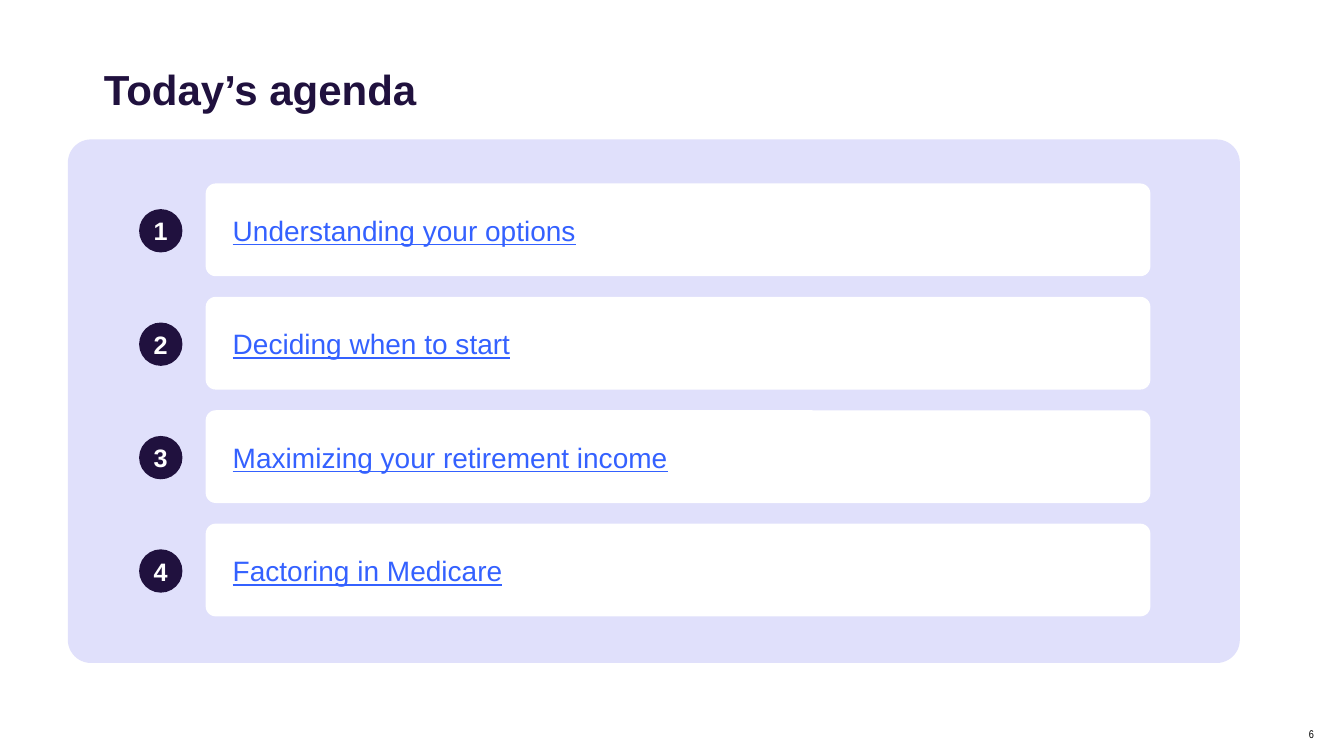
from pptx import Presentation
from pptx.dml.color import RGBColor
from pptx.enum.shapes import MSO_SHAPE as Shape
from pptx.enum.text import MSO_ANCHOR as Anchor, PP_ALIGN as Align
from pptx.util import Inches, Pt

NAVY, LAVENDER, WHITE, LINK_BLUE, BLACK = "20113E", "E0E0FB", "FFFFFF", "3461FF", "000000"
TOPICS = [
    "Understanding your options",
    "Deciding when to start",
    "Maximizing your retirement income",
    "Factoring in Medicare",
]
ROW_PITCH = 1.125
CARD_HEIGHT = 0.92
BADGE_SIZE = 0.43


def color(value):
    return RGBColor.from_string(value)


def write(shape, text, size, fill, align=Align.LEFT, inset=0.1, font="Arial",
          bold=False, underline=False):
    frame = shape.text_frame
    frame.word_wrap = True
    frame.vertical_anchor = Anchor.MIDDLE
    frame.margin_left = frame.margin_right = Inches(inset)
    frame.margin_top = frame.margin_bottom = 0
    para = frame.paragraphs[0]
    para.alignment = align
    run = para.add_run()
    run.text = text
    run.font.name = font
    run.font.size = Pt(size)
    run.font.bold = bold
    run.font.underline = underline
    run.font.color.rgb = color(fill)


def add_filled(page, kind, box, fill, corner=None):
    shape = page.shapes.add_shape(kind, *map(Inches, box))
    shape.shadow.inherit = False
    shape.fill.solid()
    shape.fill.fore_color.rgb = color(fill)
    shape.line.fill.background()
    if corner is not None:
        shape.adjustments[0] = corner
    return shape


def add_title(page, box, text):
    title = page.shapes.title
    title.left, title.top, title.width, title.height = map(Inches, box)
    write(title, text, 30, NAVY, bold=True)


def add_agenda_row(page, box, number, topic):
    """Place a numbered badge, a white card and its topic within the row box."""
    left, top, width, height = box
    card_left = left + 0.66
    add_filled(page, Shape.ROUNDED_RECTANGLE,
               (card_left, top, width - 0.66, height), WHITE, 0.109)
    badge_top = top + (height - BADGE_SIZE) / 2 + 0.01
    badge = add_filled(page, Shape.OVAL, (left, badge_top, BADGE_SIZE, BADGE_SIZE), NAVY)
    write(badge, str(number), 18, WHITE, Align.CENTER, inset=0, bold=True)
    label_box = (card_left + 0.17, top + 0.3, 8.81, 0.33)
    label = page.shapes.add_textbox(*map(Inches, label_box))
    write(label, topic, 20, LINK_BLUE, underline=True)


def add_agenda(page, box):
    left, top, width, height = box
    panel = add_filled(page, Shape.ROUNDED_RECTANGLE, box, LAVENDER, 0.043)
    panel.line.color.rgb = color(LAVENDER)
    panel.line.width = Pt(1)
    for index, topic in enumerate(TOPICS):
        row = (left + 0.7, top + 0.43 + index * ROW_PITCH, width - 1.58, CARD_HEIGHT)
        add_agenda_row(page, row, index + 1, topic)


def add_page_number(page, box, number):
    shape = page.shapes.add_textbox(*map(Inches, box))
    write(shape, str(number), 8, BLACK, Align.RIGHT, font="Arial Narrow")


def main():
    deck = Presentation()
    deck.slide_width, deck.slide_height = Inches(13.33), Inches(7.5)
    page = deck.slides.add_slide(deck.slide_layouts.get_by_name("Title Only"))
    add_title(page, (0.93, 0.55, 11.28, 0.66), "Today’s agenda")
    add_agenda(page, (0.68, 1.39, 11.61, 5.18))
    add_page_number(page, (12.43, 7.08, 0.7, 0.4), 6)
    deck.save("out.pptx")


if __name__ == "__main__":
    main()
